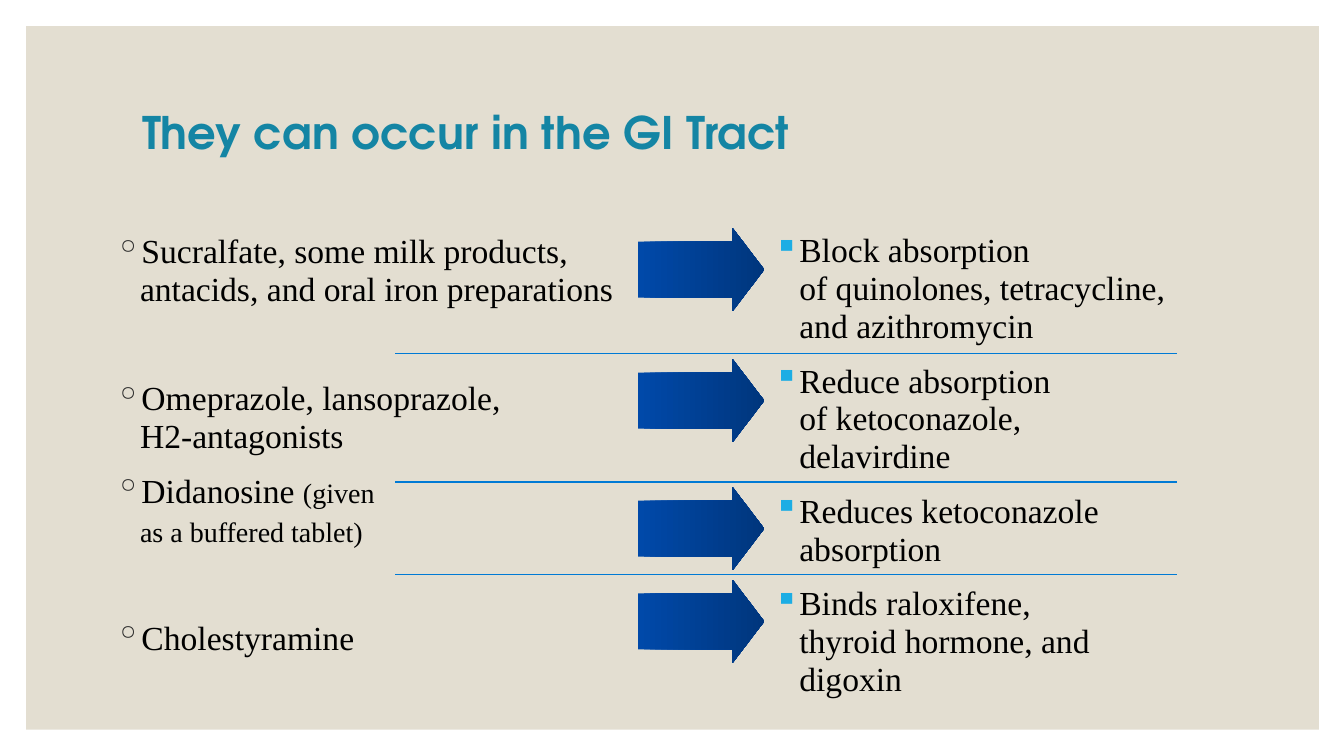
from lxml.etree import SubElement
from pptx import Presentation
from pptx.dml.color import RGBColor
from pptx.enum.shapes import MSO_CONNECTOR as Link, MSO_SHAPE as Shape
from pptx.enum.text import MSO_ANCHOR as Anchor, MSO_AUTO_SIZE as Fit, PP_ALIGN as Align
from pptx.oxml.ns import qn
from pptx.util import Inches, Pt

COLORS = {
    "panel": "E3DED1", "title": "1485A4", "text": "000000",
    "ring": "262626", "square": "1CADE4", "rule": "007AD5",
    "start": "0049A9", "end": "00367D",
}
SERIF = "Times New Roman"
GAP = 12
WIDE = 51  # space before an entry that sits apart from the one above

# Each entry: space before, then runs of (text, size)
CAUSES = [
    (0, [("Sucralfate, some milk products, antacids, and oral iron preparations", 24)]),
    (WIDE, [("Omeprazole, lansoprazole,\nH2-antagonists", 24)]),
    (GAP, [("Didanosine ", 24), ("(given\nas a buffered tablet)", 20)]),
    (WIDE, [("Cholestyramine", 24)]),
]
EFFECTS = [
    (0, [("Block absorption\nof quinolones, tetracycline, and azithromycin", 24)]),
    (GAP, [("Reduce absorption\nof ketoconazole, delavirdine", 24)]),
    (GAP, [("Reduces ketoconazole absorption", 24)]),
    (GAP, [("Binds raloxifene,\nthyroid hormone, and digoxin", 24)]),
]
ARROWS = [2.26, 3.56, 4.83, 5.75]
RULES = [3.51, 4.78, 5.7]


def color(name):
    return RGBColor.from_string(COLORS[name])


def write(para, text, size=24, font=SERIF, tint="text", bold=False):
    """Add text to a paragraph, with a line break at each newline."""
    for i, part in enumerate(text.split("\n")):
        if i:
            para.add_line_break()
        run = para.add_run()
        run.text = part
        run.font.size = Pt(size)
        run.font.name = font
        run.font.bold = bold
        run.font.color.rgb = color(tint)


def bullet(para, char, tint):
    props = para._p.get_or_add_pPr()
    props.set("marL", str(Inches(0.25)))
    props.set("indent", str(-Inches(0.25)))
    paint = SubElement(props, qn("a:buClr"))
    SubElement(paint, qn("a:srgbClr")).set("val", COLORS[tint])
    SubElement(props, qn("a:buChar")).set("char", char)


def add_list(slide, box, items, char, tint):
    frame = slide.shapes.add_textbox(*map(Inches, box)).text_frame
    frame.word_wrap = True
    for i, (space, runs) in enumerate(items):
        para = frame.add_paragraph() if i else frame.paragraphs[0]
        bullet(para, char, tint)
        para.alignment = Align.LEFT
        para.line_spacing = Pt(27)
        para.space_before = Pt(space)
        for text, size in runs:
            write(para, text, size=size)


def add_panel(slide):
    """Draw the background panel behind everything else."""
    box = map(Inches, (0.26, 0.26, 12.82, 6.98))
    panel = slide.shapes.add_shape(Shape.RECTANGLE, *box)
    panel.shadow.inherit = False
    panel.fill.solid()
    panel.fill.fore_color.rgb = color("panel")
    panel.line.fill.background()
    slide.shapes._spTree.insert(2, panel._element)


def set_title(slide, text):
    title = slide.shapes.title
    title.left, title.top, title.width, title.height = map(
        Inches, (1.31, 0.71, 8.98, 1.25))
    frame = title.text_frame
    frame.auto_size = Fit.NONE
    frame.vertical_anchor = Anchor.MIDDLE
    para = frame.paragraphs[0]
    para.alignment = Align.LEFT
    para.line_spacing = 0.9
    write(para, text, size=32, font="TeX Gyre Adventor", tint="title", bold=True)


def add_arrow(slide, top):
    box = map(Inches, (6.33, top, 1.25, 0.83))
    arrow = slide.shapes.add_shape(Shape.RIGHT_ARROW, *box)
    arrow.shadow.inherit = False
    arrow.adjustments[0] = 0.67
    arrow.adjustments[1] = 0.38
    arrow.line.fill.background()
    arrow.fill.gradient()
    arrow.fill.gradient_angle = 0
    for stop, name in zip(arrow.fill.gradient_stops, ("start", "end")):
        stop.color.rgb = color(name)


def add_rule(slide, top):
    ends = map(Inches, (3.92, top, 11.67, top))
    rule = slide.shapes.add_connector(Link.STRAIGHT, *ends)
    rule.line.color.rgb = color("rule")
    rule.line.width = Pt(1)
    SubElement(rule._element.spPr, qn("a:effectLst"))


def main():
    deck = Presentation()
    deck.slide_width, deck.slide_height = Inches(13.33), Inches(7.5)
    slide = deck.slides.add_slide(deck.slide_layouts[5])
    add_panel(slide)
    set_title(slide, "They can occur in the GI Tract")
    add_list(slide, (1.04, 2.26, 5.21, 4.49), CAUSES, "◦", "ring")
    for top in ARROWS:
        add_arrow(slide, top)
    add_list(slide, (7.58, 2.25, 4.17, 5.25), EFFECTS, "▪", "square")
    for top in RULES:
        add_rule(slide, top)
    deck.save("out.pptx")


if __name__ == "__main__":
    main()
